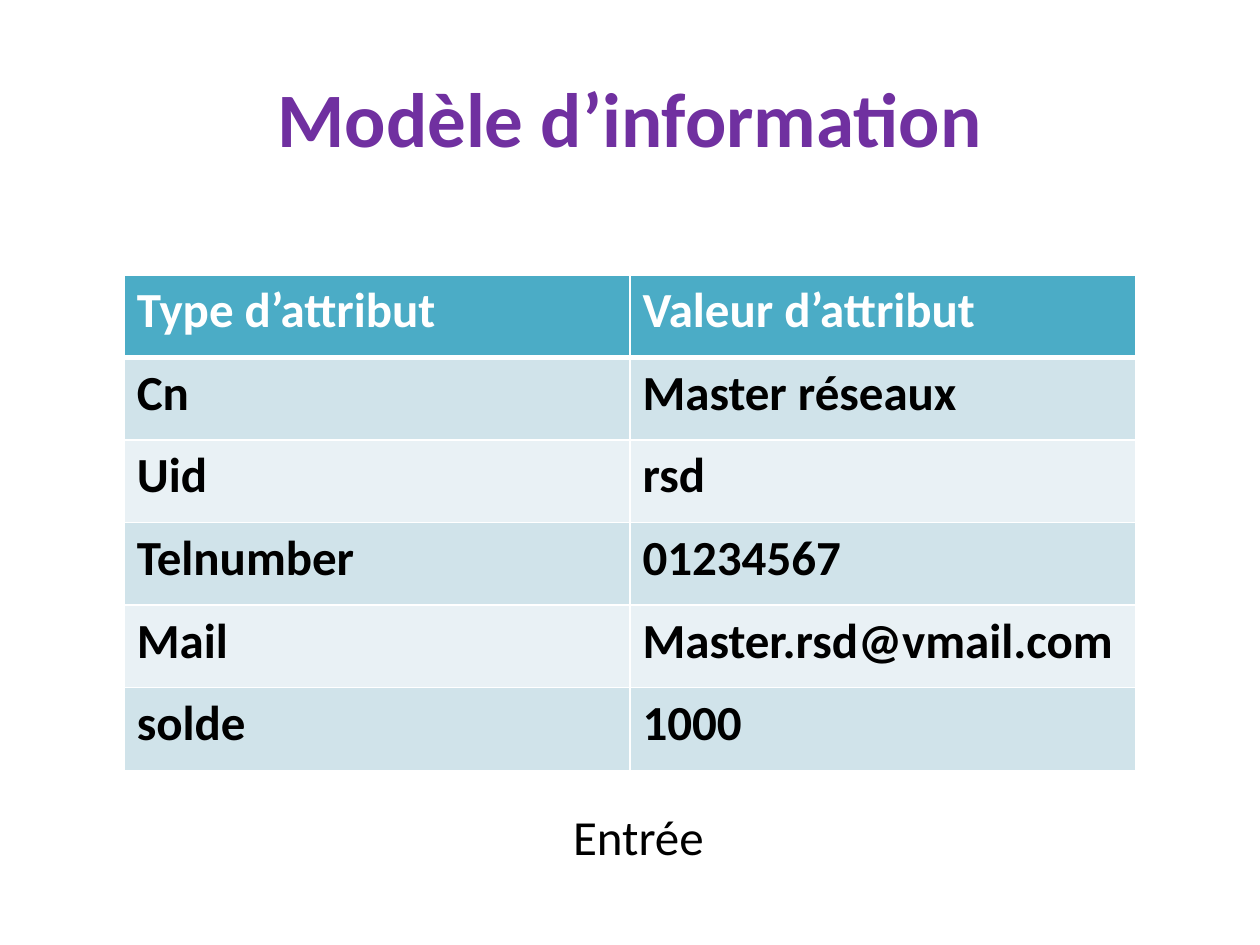
from dataclasses import dataclass

from lxml import etree
from pptx import Presentation
from pptx.dml.color import RGBColor
from pptx.enum import text
from pptx.oxml import ns
from pptx.util import Pt


@dataclass(frozen=True)
class Theme:
    font: str = "Calibri"
    title_size: float = 44
    body_size: float = 28
    title: str = "7030A0"
    ink: str = "000000"
    white: str = "FFFFFF"
    header: str = "4BACC6"
    bands: tuple[str, str] = ("D0E3EA", "E9F1F5")
    thin: float = 1
    thick: float = 3


@dataclass(frozen=True)
class Frame:
    left: float
    top: float
    width: float
    height: float

    def lengths(self) -> tuple:
        return Pt(self.left), Pt(self.top), Pt(self.width), Pt(self.height)


@dataclass(frozen=True)
class Attribute:
    kind: str
    value: str


THEME = Theme()
HEADER = Attribute("Type d’attribut", "Valeur d’attribut")
ENTRY = [
    Attribute("Cn", "Master réseaux"),
    Attribute("Uid", "rsd"),
    Attribute("Telnumber", "01234567"),
    Attribute("Mail", "Master.rsd@vmail.com"),
    Attribute("solde", "1000"),
]


def write(para, words: str, size: float, color: str, bold: bool = False) -> None:
    span = para.add_run()
    span.text = words
    span.font.name = THEME.font
    span.font.size = Pt(size)
    span.font.bold = bold
    span.font.color.rgb = RGBColor.from_string(color)


def add_text(page, frame: Frame, words: str, size: float, color: str,
             bold: bool = False, wrap: bool = True):
    box = page.shapes.add_textbox(*frame.lengths())
    box.text_frame.word_wrap = wrap
    write(box.text_frame.paragraphs[0], words, size, color, bold)
    return box


def add_border(cell, side: str, width: float) -> None:
    properties = cell._tc.get_or_add_tcPr()
    line = etree.SubElement(properties, ns.qn(f"a:ln{side}"), w=str(Pt(width)))
    fill = etree.SubElement(line, ns.qn("a:solidFill"))
    etree.SubElement(fill, ns.qn("a:srgbClr"), val=THEME.white)


def style_cell(cell, words: str, row: int) -> None:
    is_header = row == 0
    # Borders precede the fill in the cell properties
    for side in "LRTB":
        below_header = (is_header and side == "B") or (row == 1 and side == "T")
        add_border(cell, side, THEME.thick if below_header else THEME.thin)
    cell.fill.solid()
    fill = THEME.header if is_header else THEME.bands[(row - 1) % 2]
    cell.fill.fore_color.rgb = RGBColor.from_string(fill)
    color = THEME.white if is_header else THEME.ink
    write(cell.text_frame.paragraphs[0], words, THEME.body_size, color, bold=True)


def add_attribute_table(page, frame: Frame, rows: list[Attribute]) -> None:
    table = page.shapes.add_table(len(rows), 2, *frame.lengths()).table
    for row, attribute in enumerate(rows):
        for column, words in enumerate((attribute.kind, attribute.value)):
            style_cell(table.cell(row, column), words, row)


def main() -> None:
    deck = Presentation()
    deck.slide_width, deck.slide_height = Pt(720), Pt(540)
    page = deck.slides.add_slide(deck.slide_layouts[6])

    # Title
    title = add_text(page, Frame(36, 21.6, 648, 90), "Modèle d’information",
                     THEME.title_size, THEME.title, bold=True)
    title.text_frame.vertical_anchor = text.MSO_ANCHOR.MIDDLE
    title.text_frame.paragraphs[0].alignment = text.PP_ALIGN.CENTER

    # Attributes of the directory entry
    add_attribute_table(page, Frame(71, 157, 578, 283.2), [HEADER, *ENTRY])

    # Caption
    caption = add_text(page, Frame(320.4, 457.2, 90, 41), "Entrée",
                       THEME.body_size, THEME.ink, wrap=False)
    caption.text_frame.auto_size = text.MSO_AUTO_SIZE.SHAPE_TO_FIT_TEXT

    deck.save("out.pptx")


if __name__ == "__main__":
    main()
